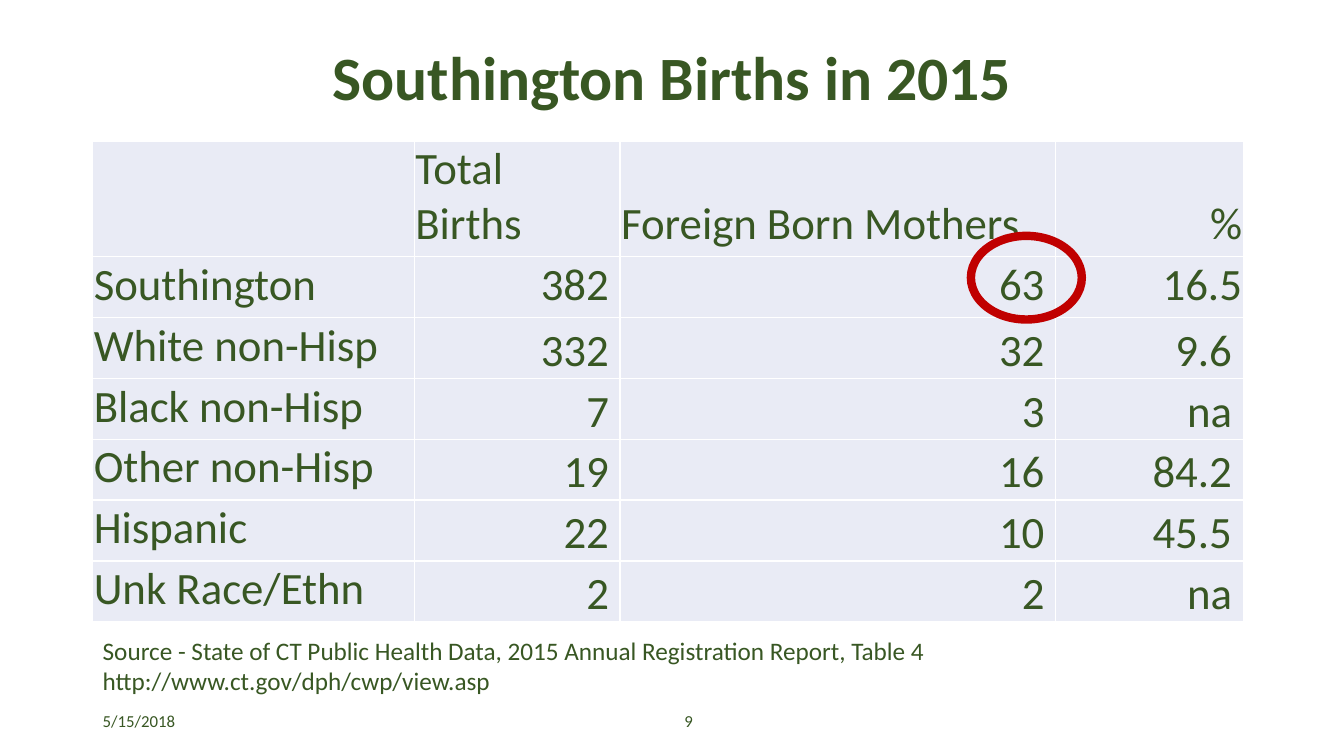
from lxml.etree import SubElement
from pptx import Presentation
from pptx.dml.color import RGBColor
from pptx.enum.shapes import MSO_SHAPE
from pptx.enum.text import MSO_ANCHOR, PP_ALIGN
from pptx.oxml.ns import qn
from pptx.util import Pt

GREEN = RGBColor(0x38, 0x57, 0x23)
PALE = RGBColor(0xE9, 0xEB, 0xF5)
RED = RGBColor(0xC0, 0x00, 0x00)
WHITE = RGBColor(0xFF, 0xFF, 0xFF)

WIDTHS = [319, 204, 432, 186]
HEAD, ROW = 114, 60
BIRTHS = [
    ["", "Total Births", "Foreign Born Mothers", "%"],
    ["Southington", "382", "63", "16.5"],
    ["White non-Hisp", "332", "32", "9.6"],
    ["Black non-Hisp", "7", "3", "na"],
    ["Other non-Hisp", "19", "16", "84.2"],
    ["Hispanic", "22", "10", "45.5"],
    ["Unk Race/Ethn", "2", "2", "na"],
]


class Deck:
    font = "Calibri"
    scale = 9144

    def __init__(self, wide, high):
        self.show = Presentation()
        self.show.slide_width = self.px(wide)
        self.show.slide_height = self.px(high)
        self.slide = self.show.slides.add_slide(self.show.slide_layouts[5])

    def px(self, size):
        return size * self.scale

    def box(self, *sides):
        return [self.px(side) for side in sides]

    def label(self, frame, text, size, align=PP_ALIGN.LEFT, bold=False):
        para = frame.paragraphs[0]
        para.alignment = align
        run = para.add_run()
        run.text = text
        font = run.font
        font.name, font.size, font.bold = self.font, Pt(size), bold
        font.color.rgb = GREEN
        return para

    def title(self, text, *sides):
        shape = self.slide.shapes.title
        shape.left, shape.top, shape.width, shape.height = self.box(*sides)
        shape.text_frame.vertical_anchor = MSO_ANCHOR.MIDDLE
        para = self.label(shape.text_frame, text, 44, PP_ALIGN.CENTER, True)
        para.line_spacing = 0.9

    def text(self, text, size, *sides, align=PP_ALIGN.LEFT, anchor=MSO_ANCHOR.TOP):
        frame = self.slide.shapes.add_textbox(*self.box(*sides)).text_frame
        frame.word_wrap = True
        frame.vertical_anchor = anchor
        self.label(frame, text, size, align)

    def ring(self, *sides):
        shape = self.slide.shapes.add_shape(MSO_SHAPE.OVAL, *self.box(*sides))
        shape.shadow.inherit = False
        shape.fill.background()
        shape.line.color.rgb = RED
        shape.line.width = Pt(6)

    def border(self, cell):
        props = cell._tc.get_or_add_tcPr()
        for side in ("a:lnL", "a:lnR", "a:lnT", "a:lnB"):
            line = SubElement(props, qn(side), w=str(Pt(1)))
            fill = SubElement(line, qn("a:solidFill"))
            SubElement(fill, qn("a:srgbClr"), val=str(WHITE))

    def cell(self, cell, text, right, pad, base):
        self.border(cell)
        cell.fill.solid()
        cell.fill.fore_color.rgb = PALE
        cell.vertical_anchor = MSO_ANCHOR.BOTTOM
        cell.margin_left = cell.margin_top = self.px(1)
        cell.margin_right, cell.margin_bottom = self.box(pad, base)
        if text:
            align = PP_ALIGN.RIGHT if right else PP_ALIGN.LEFT
            self.label(cell.text_frame, text, 32, align)

    def table(self, rows, left, top):
        high = HEAD + ROW * (len(rows) - 1)
        sides = self.box(left, top, sum(WIDTHS), high)
        grid = self.slide.shapes.add_table(len(rows), len(WIDTHS), *sides).table
        grid.first_row = grid.horz_banding = False
        for col, width in zip(grid.columns, WIDTHS):
            col.width = self.px(width)
        for r, row in enumerate(rows):
            grid.rows[r].height = self.px(ROW if r else HEAD)
            for c, text in enumerate(row):
                count = r > 0 and c > 0
                right = count or text == "%"
                pad = 11 if count and text != "16.5" else 1
                base = 0 if count and r > 1 else 5
                self.cell(grid.cell(r, c), text, right, pad, base)


def main():
    deck = Deck(1333, 750)
    deck.title("Southington Births in 2015", 92, 7, 1150, 145)
    deck.table(BIRTHS, 92, 140)
    deck.text(
        "Source - State of CT Public Health Data, 2015 Annual Registration Report, "
        "Table 4 http://www.ct.gov/dph/cwp/view.asp",
        18, 92, 625, 852, 71,
    )
    deck.ring(963, 234, 110, 83)
    deck.text("9", 12, 636, 695, 61, 40, align=PP_ALIGN.RIGHT, anchor=MSO_ANCHOR.MIDDLE)
    deck.text("5/15/2018", 12, 92, 695, 300, 40, anchor=MSO_ANCHOR.MIDDLE)
    deck.show.save("out.pptx")


if __name__ == "__main__":
    main()
